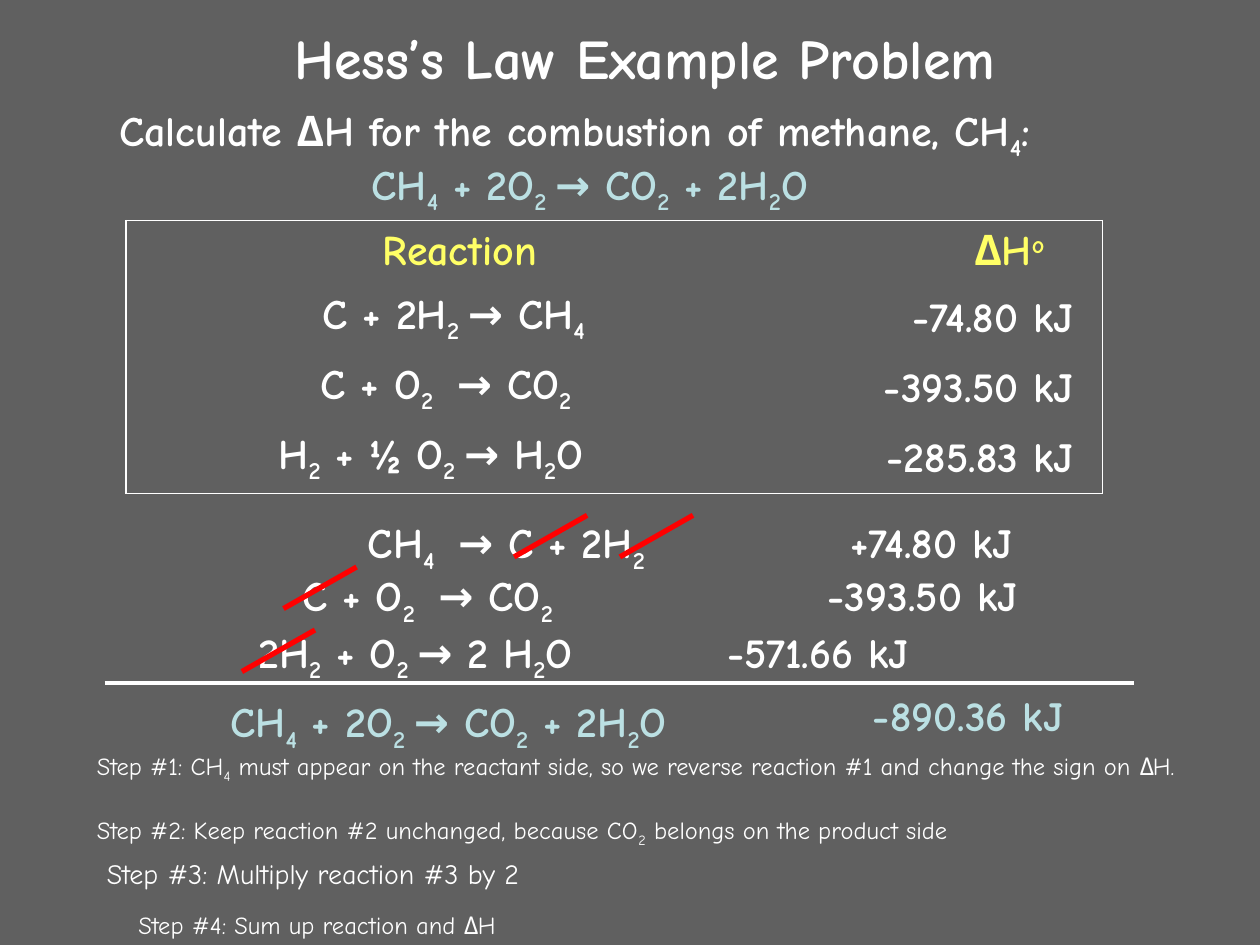
import pptx
import pptx.dml.color
import pptx.enum.shapes
import pptx.enum.text
import pptx.oxml
import pptx.oxml.ns
import pptx.util
from lxml import etree
from pptx.util import Inches

RGBColor = pptx.dml.color.RGBColor
GRAY = RGBColor(0x60, 0x60, 0x60)
WHITE = RGBColor(0xFF, 0xFF, 0xFF)
YELLOW = RGBColor(0xFF, 0xFF, 0x66)
PALE_BLUE = RGBColor(0xBB, 0xE0, 0xE3)
RED = RGBColor(0xFF, 0, 0)

ALIGN = pptx.enum.text.PP_ALIGN
MIDDLE = pptx.enum.text.MSO_ANCHOR.MIDDLE
qn = pptx.oxml.ns.qn

GOAL = "CH|4| + 2O|2 |→ CO|2| + 2H|2|O"
REACTIONS = [  # equation, left inset, right inset, enthalpy
    ("C + 2H|2 |→ CH|4", 0.34, 0.1, "-74.80 kJ"),
    ("C + O|2 | → CO|2", 0.22, 0.1, "-393.50 kJ"),
    ("H|2| + ½ O|2 |→ H|2|O", 0.1, 0.22, "-285.83 kJ"),
]
REARRANGED = [  # equation and enthalpy, box, text start, enthalpy start, top inset
    ("CH|4 | → C + 2H|2|\t+74.80 kJ", (2.58, 4, 6.77, 0.57), 2.92, 6.75, 0.1),
    ("C + O|2 | → CO|2|\t-393.50 kJ", (2.17, 4.42, 6.83, 0.57), 2.4, 6.57, 0.1),
    ("2H|2| + O|2 |→ 2 H|2|O\t-571.66 kJ", (1.83, 4.92, 7.12, 0.5), 2.05, 5.77, 0.05),
]
STEPS = [
    ("Step #1: CH|4| must appear on the reactant side, so we reverse reaction #1 "
     "and change the sign on ΔH.", (0.67, 5.91, 8.77, 0.57), 14),
    ("Step #2: Keep reaction #2 unchanged, because CO|2| belongs on the product side",
     (0.67, 6.42, 8.68, 0.33), 14),
    ("Step #3: Multiply reaction #3 by 2", (0.75, 6.75, 6.93, 0.37), 16),
    ("Step #4: Sum up reaction and ΔH", (1, 7.17, 3.25, 0.33), 14),
]
CANCELLED = [(4.08, 4.42), (2.25, 4.83), (1.92, 5.33), (4.92, 4.42)]


class HessSlide:
    font_name = "Comic Neue"

    def __init__(self, slide):
        self.slide = slide
        slide.background.fill.solid()
        slide.background.fill.fore_color.rgb = GRAY

    def formula(self, paragraph, text, size=24, color=WHITE, bold=True, align=ALIGN.LEFT,
                shift=-25):
        """Every second piece between bars is raised or lowered by shift percent."""
        paragraph.alignment = align
        style = {"name": self.font_name, "size": pptx.util.Pt(size), "bold": bold}
        for index, piece in enumerate(text.split("|")):
            if not piece:
                continue
            run = paragraph.add_run()
            run.text = piece
            for key, value in style.items():
                setattr(run.font, key, value)
            run.font.color.rgb = color
            if index % 2:
                run.font._element.set("baseline", str(shift * 1000))

    def text(self, text, box, left=0.1, top=0.05, tab=None, anchor=None, **style):
        frame = self.slide.shapes.add_textbox(*map(Inches, box)).text_frame
        settings = {
            "word_wrap": True,
            "margin_left": Inches(left),
            "margin_top": Inches(top),
            "vertical_anchor": anchor,
        }
        for key, value in settings.items():
            setattr(frame, key, value)
        paragraph = frame.paragraphs[0]
        self.formula(paragraph, text, **style)
        if tab:
            stops = etree.SubElement(paragraph._p.get_or_add_pPr(), qn("a:tabLst"))
            etree.SubElement(stops, qn("a:tab"), pos=str(Inches(tab)), algn="l")

    def table(self, rows, widths, box):
        shape = self.slide.shapes.add_table(rows, len(widths), *map(Inches, box))
        table = shape.table
        table.first_row = table.horz_banding = False
        for column, width in zip(table.columns, widths):
            column.width = Inches(width)
        return table

    def cell(self, cell, lines, left=0.1, right=0.1, edges="", **style):
        cell.margin_left, cell.margin_right = Inches(left), Inches(right)
        cell.vertical_anchor = MIDDLE
        cell.fill.background()
        self.borders(cell, edges)
        for index, (text, color, indent) in enumerate(lines):
            frame = cell.text_frame
            paragraph = frame.add_paragraph() if index else frame.paragraphs[0]
            self.formula(paragraph, text, color=color, **style)
            if indent:
                paragraph._p.get_or_add_pPr().set("marL", str(Inches(indent)))

    def borders(self, cell, edges):
        """Draw white borders on the named edges and hide the others."""
        properties = cell._tc.get_or_add_tcPr()
        for index, edge in enumerate("LRTB"):
            border = etree.Element(qn("a:ln" + edge), w=str(pptx.util.Pt(1)))
            if edge in edges:
                fill = etree.SubElement(border, qn("a:solidFill"))
                etree.SubElement(fill, qn("a:srgbClr"), val=str(WHITE))
            else:
                etree.SubElement(border, qn("a:noFill"))
            properties.insert(index, border)

    def line(self, start, end, color, width):
        straight = pptx.enum.shapes.MSO_CONNECTOR.STRAIGHT
        connector = self.slide.shapes.add_connector(straight, *map(Inches, start + end))
        connector.line.color.rgb = color
        connector.line.width = pptx.util.Pt(width)
        etree.SubElement(connector._element.spPr, qn("a:effectLst"))


def main():
    deck = pptx.Presentation()
    deck.slide_width, deck.slide_height = Inches(10), Inches(7.5)
    page = HessSlide(deck.slides.add_slide(deck.slide_layouts[6]))

    page.text("Hess’s Law Example Problem", (1.83, 0.08, 6.58, 0.75),
              size=32, align=ALIGN.CENTER, anchor=MIDDLE)

    question = page.table(1, (8.65, 0.52), (0.42, 0.75, 9.17, 1.08))
    task = "Calculate ΔH for the combustion of methane, CH|4|:"
    page.cell(question.cell(0, 0), [(task, WHITE, 0), (GOAL, PALE_BLUE, 0.24)],
              right=0.47, align=ALIGN.CENTER)
    page.cell(question.cell(0, 1), [])

    given = page.table(4, (4.96, 2.79), (1, 1.75, 7.75, 2))
    page.cell(given.cell(0, 0), [("Reaction", YELLOW, 0)], left=0.44,
              edges="LT", align=ALIGN.CENTER)
    page.cell(given.cell(0, 1), [("ΔH|o", YELLOW, 0)], right=0.46,
              edges="RT", align=ALIGN.RIGHT, shift=30)
    for row, (equation, left, right, enthalpy) in enumerate(REACTIONS, 1):
        bottom = "B" if row == len(REACTIONS) else ""
        page.cell(given.cell(row, 0), [(equation, WHITE, 0)], left, right,
                  edges="L" + bottom, align=ALIGN.CENTER)
        page.cell(given.cell(row, 1), [(enthalpy, WHITE, 0)], right=0.23,
                  edges="R" + bottom, align=ALIGN.RIGHT)

    for equation, box, start, enthalpy_start, top in REARRANGED:
        page.text(equation, box, left=start - box[0], top=top, tab=enthalpy_start - start)
    for step, box, size in STEPS:
        page.text(step, box, size=size, bold=False)

    page.line((0.83, 5.42), (9, 5.42), WHITE, 2.25)
    for x, y in CANCELLED:
        page.line((x, y), (x + 0.58, y - 0.33), RED, 3)

    page.text(GOAL, (1.73, 5.42, 4.6, 0.57), top=0.1, color=PALE_BLUE)
    page.text("-890.36 kJ", (6.83, 5.42, 2.11, 0.5), color=PALE_BLUE)
    deck.save("out.pptx")


if __name__ == "__main__":
    main()
